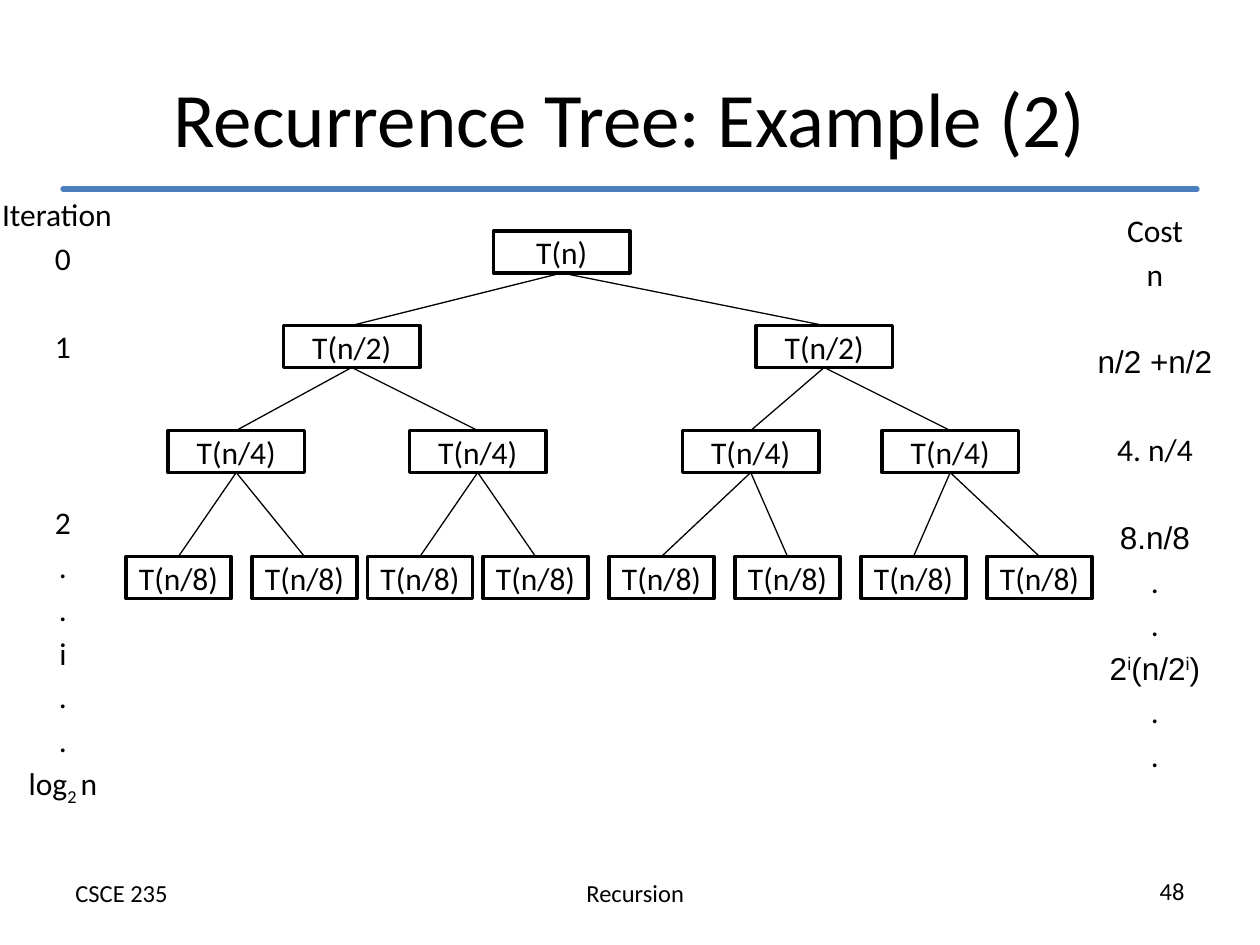
from dataclasses import dataclass

from lxml import etree
from pptx import Presentation
from pptx.dml.color import RGBColor
from pptx.enum.shapes import MSO_CONNECTOR, MSO_SHAPE
from pptx.enum.text import MSO_ANCHOR, MSO_AUTO_SIZE, PP_ALIGN
from pptx.oxml.ns import qn
from pptx.util import Emu, Pt

STRAIGHT = MSO_CONNECTOR.STRAIGHT
RECT = MSO_SHAPE.RECTANGLE
TOP, MIDDLE = MSO_ANCHOR.TOP, MSO_ANCHOR.MIDDLE
LEFT, CENTER, RIGHT = PP_ALIGN.LEFT, PP_ALIGN.CENTER, PP_ALIGN.RIGHT
NO_FIT = MSO_AUTO_SIZE.NONE

PX = 9525
BLACK, BLUE = "000000", "4B7EBC"
SANS, ARIAL = "Calibri", "Arial"
GAP, PITCH = 3.3, 25.3


@dataclass(frozen=True)
class Run:
    text: str
    font: str = SANS
    baseline: int = 0


@dataclass(frozen=True)
class Line:
    runs: tuple[Run, ...]
    rows_before: int = 0
    align: PP_ALIGN = CENTER


@dataclass(frozen=True)
class Level:
    label: str
    top: int
    width: int
    lefts: tuple[int, ...]


@dataclass(frozen=True)
class Footer:
    text: str
    box: tuple[int, int, int, int]
    align: PP_ALIGN


def px(n: int) -> Emu:
    return Emu(n * PX)


def color(value: str) -> RGBColor:
    return RGBColor.from_string(value)


def add_run(p, run: Run, size: int) -> None:
    r = p.add_run()
    r.text = run.text
    r.font.name, r.font.size = run.font, Pt(size)
    r.font.color.rgb = color(BLACK)
    if run.baseline:
        r._r.get_or_add_rPr().set("baseline", str(run.baseline * 1000))


def place(s, box: tuple[int, int, int, int]) -> None:
    s.left, s.top, s.width, s.height = map(px, box)


def set_text(s, text: str, size: int, align: PP_ALIGN, anchor: MSO_ANCHOR, wrap: bool) -> None:
    tf = s.text_frame
    tf.auto_size, tf.word_wrap, tf.vertical_anchor = NO_FIT, wrap, anchor
    p = tf.paragraphs[0]
    p.alignment = align
    add_run(p, Run(text), size)


def fill_column(s, lines: tuple[Line, ...]) -> None:
    tf = s.text_frame
    tf.auto_size, tf.word_wrap, tf.vertical_anchor = NO_FIT, True, TOP
    for i, line in enumerate(lines):
        p = tf.add_paragraph() if i else tf.paragraphs[0]
        p.alignment = line.align
        p.space_before = Pt(GAP + PITCH * line.rows_before)
        pPr = p._p.get_or_add_pPr()
        pPr.set("marL", str(px(36)))
        pPr.set("indent", str(px(-36)))
        etree.SubElement(pPr, qn("a:buNone"))
        for run in line.runs:
            add_run(p, run, 18)


def add_line(shapes, start: tuple[int, int], end: tuple[int, int], hue: str, width: float):
    c = shapes.add_connector(STRAIGHT, *map(px, start + end))
    c.line.color.rgb, c.line.width = color(hue), Pt(width)
    etree.SubElement(c._element.spPr, qn("a:effectLst"))
    return c


def add_node(shapes, label: str, left: int, top: int, width: int):
    sp = shapes.add_shape(RECT, px(left), px(top), px(width), px(32))
    sp.shadow.inherit = False
    sp.fill.background()
    sp.line.color.rgb, sp.line.width = color(BLACK), Pt(2)
    set_text(sp, label, 18, CENTER, MIDDLE, False)
    return sp


def add_tree(shapes, levels: tuple[Level, ...]) -> None:
    nodes = [add_node(shapes, v.label, x, v.top, v.width) for v in levels for x in v.lefts]
    for i, child in enumerate(nodes[1:]):
        link = add_line(shapes, (0, 0), (0, 0), BLACK, 0.75)
        link.begin_connect(nodes[i // 2], 2)
        link.end_connect(child, 0)


def plain(text: str, rows_before: int = 0, font: str = SANS) -> Line:
    return Line((Run(text, font),), rows_before)


DOT = plain(".")
ITERATIONS = (
    Line((Run("Iteration"),), align=LEFT),
    plain("0"), plain("1", 1), plain("2", 3), DOT, DOT, plain("i"), DOT, DOT,
    Line((Run("log"), Run("2 ", baseline=-25), Run("n"))),
)
COSTS = (
    plain("Cost"), plain("n"), plain("n/2 +n/2", 1, ARIAL), plain("4. n/4", 1),
    plain("8.n/8", 1, ARIAL), DOT, DOT,
    Line((Run("2", ARIAL), Run("i", ARIAL, 30), Run("(n/2", ARIAL),
          Run("i", ARIAL, 30), Run(")", ARIAL))),
    DOT, DOT,
)
LEVELS = (
    Level("T(n)", 176, 104, (376,)),
    Level("T(n/2)", 248, 104, (216, 576)),
    Level("T(n/4)", 328, 104, (128, 312, 520, 672)),
    Level("T(n/8)", 424, 80, (96, 192, 280, 368, 464, 560, 656, 752)),
)
FOOTERS = (
    Footer("Recursion", (344, 664, 280, 61), CENTER),
    Footer("CSCE 235", (48, 664, 280, 33), LEFT),
    Footer("48", (632, 663, 280, 33), RIGHT),
)


def main() -> None:
    prs = Presentation()
    prs.slide_width, prs.slide_height = px(960), px(720)
    s = prs.slides.add_slide(prs.slide_layouts[1])
    title, body = s.placeholders
    place(title, (48, 29, 864, 120))
    set_text(title, "Recurrence Tree: Example (2)", 44, CENTER, MIDDLE, True)
    place(body, (-8, 144, 112, 499))
    fill_column(body, ITERATIONS)

    rule = add_line(s.shapes, (48, 144), (912, 144), BLUE, 3)
    rule.line._get_or_add_ln().set("cap", "rnd")
    add_tree(s.shapes, LEVELS)
    fill_column(s.shapes.add_textbox(*map(px, (808, 156, 144, 499))), COSTS)
    for footer in FOOTERS:
        box = s.shapes.add_textbox(*map(px, footer.box))
        set_text(box, footer.text, 14, footer.align, TOP, True)
    prs.save("out.pptx")


if __name__ == "__main__":
    main()
